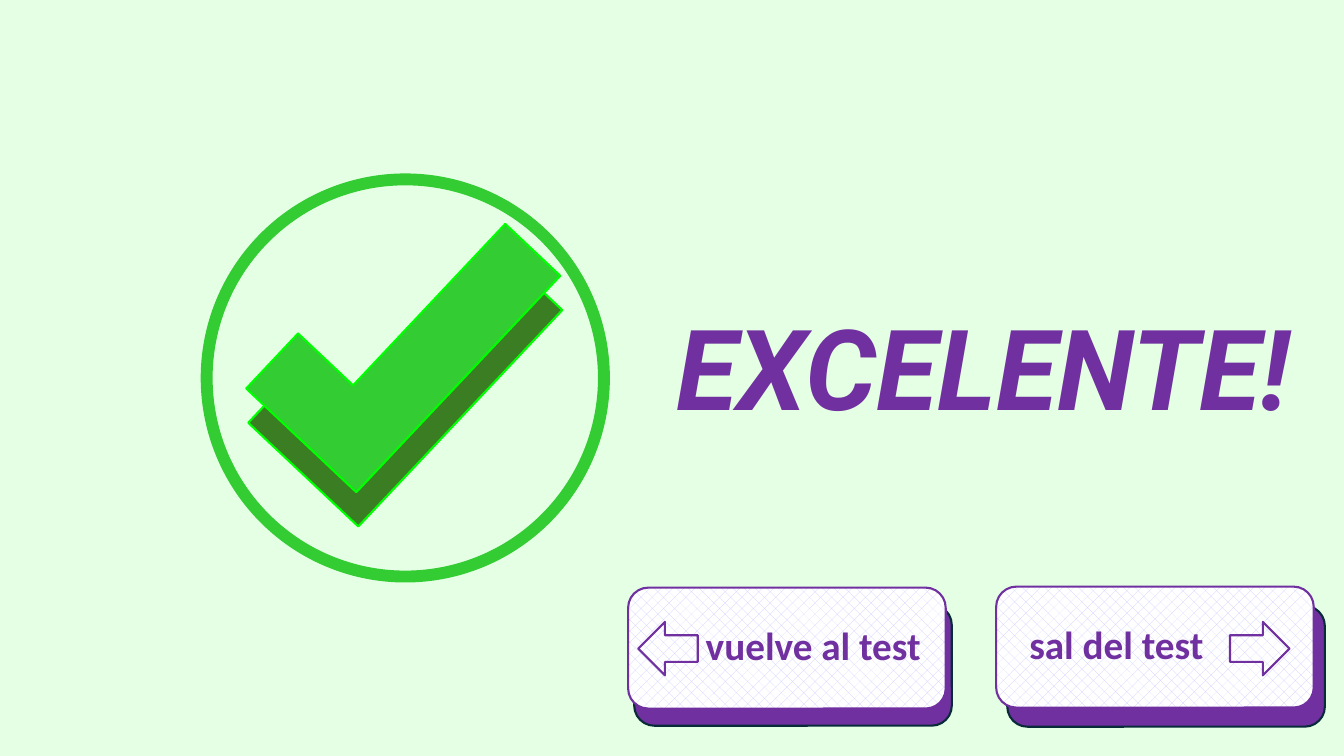
import pptx
import pptx.dml.color
import pptx.enum.dml
import pptx.enum.shapes
import pptx.enum.text
import pptx.oxml
import pptx.util
from pptx.util import Inches

RGBColor = pptx.dml.color.RGBColor
SHAPE = pptx.enum.shapes.MSO_SHAPE
ALIGN = pptx.enum.text.PP_ALIGN
ANCHOR = pptx.enum.text.MSO_ANCHOR

MINT = RGBColor(0xE5, 0xFF, 0xE5)
PURPLE = RGBColor(0x70, 0x30, 0xA0)
NAVY = RGBColor(0x09, 0x2A, 0x39)
GREEN = RGBColor(0x33, 0xCC, 0x33)
DARK_GREEN = RGBColor(0x3B, 0x7D, 0x23)
LIME = RGBColor(0x00, 0xFF, 0x00)
LAVENDER = RGBColor(0xCC, 0xCC, 0xFF)
WHITE = RGBColor(0xFF, 0xFF, 0xFF)

BUTTON_SIZE = (3.15, 1.2)
CHECK_SIZE = (1.5, 2.95)
ARROW_SIZE = (0.59, 0.53)
TITLE_FONT = {"name": "Roboto", "size": pptx.util.Pt(80), "bold": True, "italic": True}
BUTTON_FONT = {"name": "Calibri", "size": pptx.util.Pt(28), "bold": True}


def set_values(target, values):
    """Set each attribute of the target from a dict of format values."""
    for name, value in values.items():
        setattr(target, name, value)


def add_figure(page, kind, place, size, fill, line, width=1.5, flipped=False):
    """Add a preset shape with a solid or empty fill and an outline."""
    figure = page.shapes.add_shape(kind, *map(Inches, place + size))
    figure.shadow.inherit = False
    if fill is None:
        figure.fill.background()
    else:
        figure.fill.solid()
        figure.fill.fore_color.rgb = fill
    figure.line.color.rgb = line
    figure.line.width = pptx.util.Pt(width)
    if flipped:
        figure._element.spPr.xfrm.set("flipH", "1")
    return figure


def add_span(para, text, font):
    """Write purple text into a paragraph with the given font values."""
    span = para.add_run()
    span.text = text
    set_values(span.font, font)
    span.font.color.rgb = PURPLE
    return span


def add_title(page, text):
    """Place the outlined heading in the title placeholder."""
    title = page.shapes.title
    place = map(Inches, (6.51, 2.91, 6.5, 1.45))
    set_values(title, dict(zip(("left", "top", "width", "height"), place)))
    set_values(title.text_frame, {"word_wrap": False, "vertical_anchor": ANCHOR.TOP})
    para = title.text_frame.paragraphs[0]
    para.alignment = ALIGN.CENTER
    span = add_span(para, text, TITLE_FONT)
    outline = pptx.oxml.parse_xml(
        '<a:ln xmlns:a="http://schemas.openxmlformats.org/drawingml/2006/main" w="12700">'
        f'<a:solidFill><a:srgbClr val="{PURPLE}"/></a:solidFill></a:ln>'
    )
    span._r.get_or_add_rPr().insert(0, outline)


def add_check(page, place, fill):
    """Add one tilted check mark."""
    check = add_figure(page, SHAPE.CORNER, place, CHECK_SIZE, fill, LIME, flipped=True)
    check.rotation = 43.3


def add_button(page, place, base_place, text, align, margin, arrow_place, flipped):
    """Add a patterned button with its purple base, label and arrow."""
    add_figure(page, SHAPE.ROUNDED_RECTANGLE, base_place, BUTTON_SIZE, PURPLE, NAVY)
    box = add_figure(page, SHAPE.ROUNDED_RECTANGLE, place, BUTTON_SIZE, WHITE, PURPLE)
    box.fill.patterned()
    box.fill.pattern = pptx.enum.dml.MSO_PATTERN.PERCENT_25
    box.fill.fore_color.rgb = LAVENDER
    box.fill.back_color.rgb = WHITE
    frame = box.text_frame
    set_values(frame, {"word_wrap": True, "vertical_anchor": ANCHOR.MIDDLE,
                       "margin_left": Inches(margin)})
    para = frame.paragraphs[0]
    set_values(para, {"alignment": align, "line_spacing": 0.9,
                      "space_before": pptx.util.Pt(10)})
    add_span(para, text, BUTTON_FONT)
    add_figure(page, SHAPE.LEFT_ARROW, arrow_place, ARROW_SIZE, None, PURPLE, flipped=flipped)


def main():
    """Build and save the slide."""
    deck = pptx.Presentation()
    set_values(deck, {"slide_width": Inches(13.33), "slide_height": Inches(7.5)})
    page = deck.slides.add_slide(deck.slide_layouts.get_by_name("Title Only"))
    page.background.fill.solid()
    page.background.fill.fore_color.rgb = MINT
    add_title(page, "EXCELENTE!")
    add_check(page, (3.27, 2.16), DARK_GREEN)
    add_figure(page, SHAPE.FLOWCHART_CONNECTOR, (2.05, 1.78), (3.94, 3.94), None, GREEN, 8.5)
    add_check(page, (3.25, 1.82), GREEN)
    add_button(page, (6.23, 5.83), (6.29, 6), "vuelve al test",
               ALIGN.CENTER, 0.62, (6.33, 6.17), False)
    add_button(page, (9.88, 5.82), (9.99, 6.01), "sal del test",
               ALIGN.LEFT, 0.27, (12.2, 6.17), True)
    deck.save("out.pptx")


if __name__ == "__main__":
    main()
